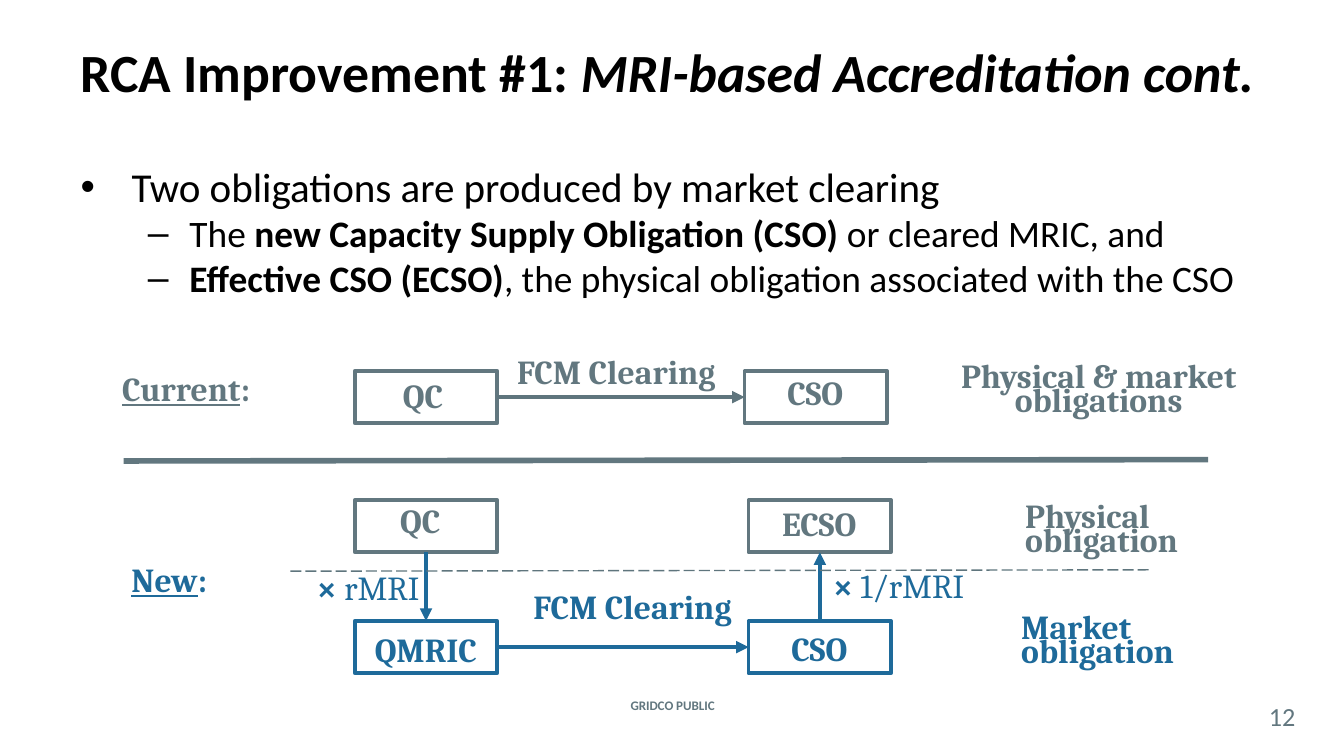
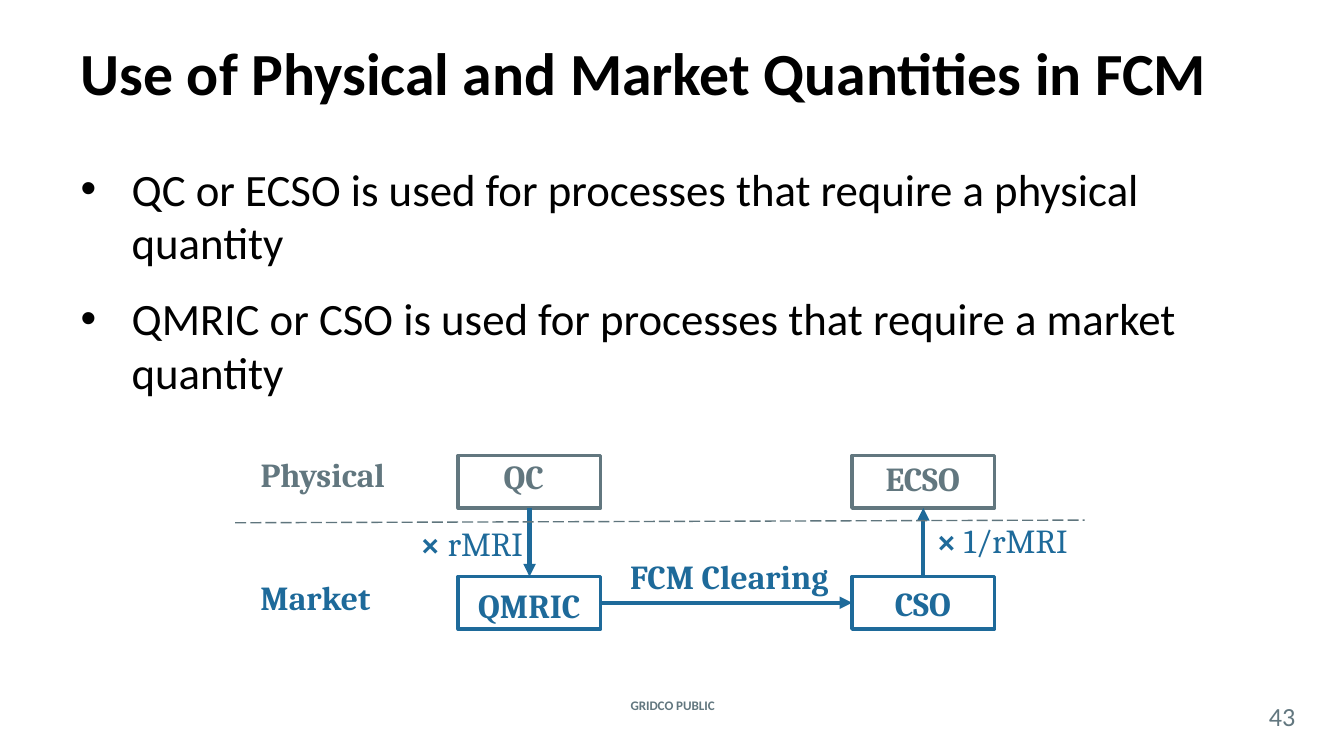
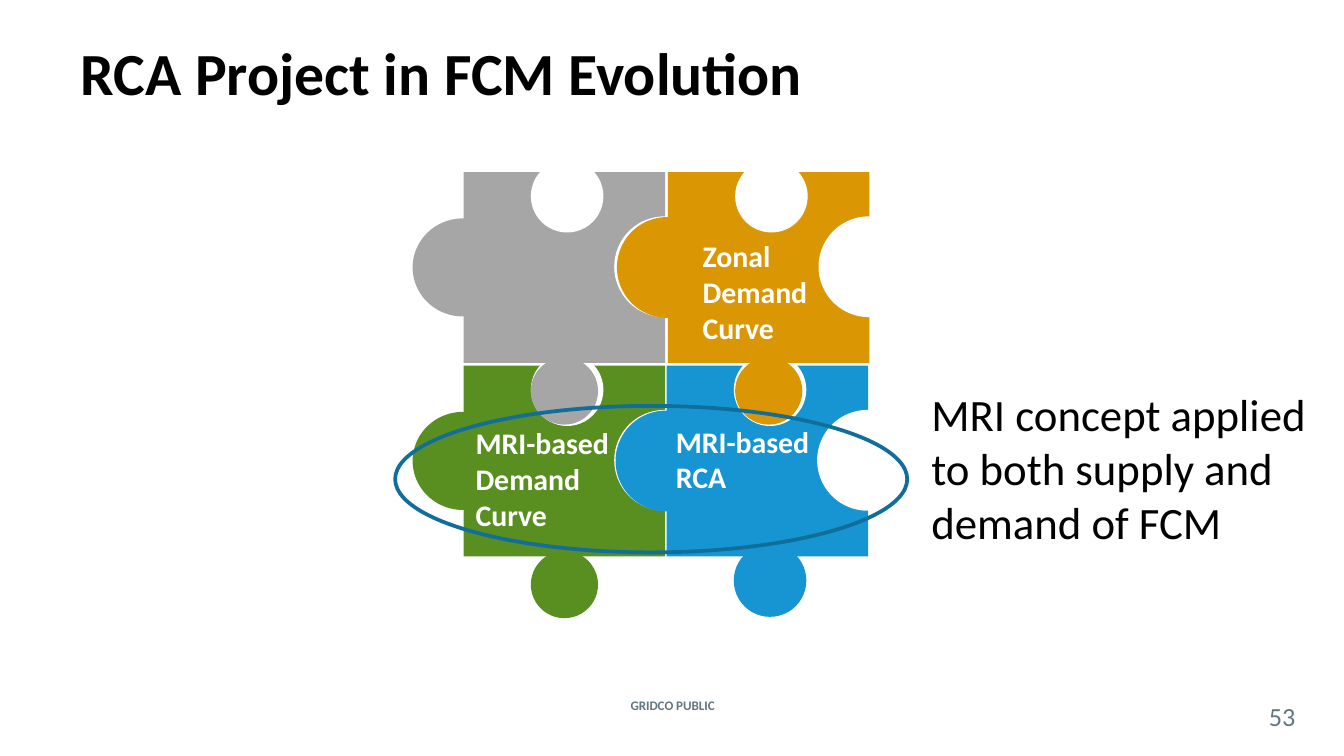
import pptx
import pptx.util
import pptx.dml.color
import pptx.enum.dml
import pptx.enum.shapes
import pptx.enum.text
import pptx.oxml.ns
import lxml.etree

Inches = pptx.util.Inches
Shape = pptx.enum.shapes.MSO_SHAPE
Align = pptx.enum.text.PP_ALIGN
Anchor = pptx.enum.text.MSO_ANCHOR
Dash = pptx.enum.dml.MSO_LINE
qn = pptx.oxml.ns.qn


class Theme:
    sans = "Calibri"
    serif = "Cambria"
    black = "000000"
    white = "FFFFFF"
    slate = "62777F"
    steel = "5F757D"
    blue = "1E6A9A"
    ring = "116E9B"
    green = "598E20"
    grey = "A6A6A6"
    sky = "1795D2"
    gold = "DB9604"
    title = 32
    label = 18
    piece = 16
    page = 14
    foot = 7
    lead = 13
    gap = 12
    edge = 2
    arrow = 2.25


BOX = (1.06, 0.39)
STEP = (2.93, 0.9)
TILE = (1.5, 1.42)


def color(code):
    return pptx.dml.color.RGBColor.from_string(code)


def place(shape, left, top, width, height):
    shape.left, shape.top = Inches(left), Inches(top)
    shape.width, shape.height = Inches(width), Inches(height)


def write(para, runs, size, tint=Theme.black, face=Theme.sans, bold=None):
    if isinstance(runs, str):
        runs = [(runs, "")]
    font = para.font
    font.name, font.size, font.bold = face, pptx.util.Pt(size), bold
    font.color.rgb = color(tint)
    for text, marks in runs:
        run = para.add_run()
        run.text = text
        if "b" in marks:
            run.font.bold = True
        if "i" in marks:
            run.font.italic = True
        if "u" in marks:
            run.font.underline = True


def add_text(slide, at, runs, size, tint, face=Theme.sans, bold=True,
             align=Align.LEFT, anchor=Anchor.TOP):
    box = slide.shapes.add_textbox(*map(Inches, at))
    frame = box.text_frame
    frame.word_wrap = True
    frame.vertical_anchor = anchor
    para = frame.paragraphs[0]
    para.alignment = align
    write(para, runs, size, tint, face, bold)
    return frame


def add_label(slide, at, runs, tint, bold=True, align=Align.LEFT):
    frame = add_text(slide, at, runs, Theme.label, tint, Theme.serif, bold, align)
    para = frame.paragraphs[0]
    para.line_spacing = pptx.util.Pt(Theme.lead)
    para.space_after = pptx.util.Pt(Theme.gap)


def add_form(slide, kind, at, fill=None, line=None):
    form = slide.shapes.add_shape(kind, *map(Inches, at))
    form.shadow.inherit = False
    if fill:
        form.fill.solid()
        form.fill.fore_color.rgb = color(fill)
    else:
        form.fill.background()
    if line:
        form.line.color.rgb = color(line)
        form.line.width = pptx.util.Pt(Theme.edge)
    else:
        form.line.fill.background()
    return form


def add_box(slide, left, top, tint):
    return add_form(slide, Shape.RECTANGLE, (left, top, *BOX), line=tint)


def add_line(slide, ends, tint, width, dash=None):
    straight = pptx.enum.shapes.MSO_CONNECTOR.STRAIGHT
    line = slide.shapes.add_connector(straight, *map(Inches, ends))
    line.line.color.rgb = color(tint)
    line.line.width = pptx.util.Pt(width)
    if dash:
        line.line.dash_style = dash
    lxml.etree.SubElement(line._element.spPr, qn("a:effectLst"))
    return line


def add_arrow(slide, start, side, end, goal, tint):
    line = add_line(slide, (0, 0, 0, 0), tint, Theme.arrow)
    line.begin_connect(start, side)
    line.end_connect(end, goal)
    tail = lxml.etree.SubElement(line.line._get_or_add_ln(), qn("a:tailEnd"))
    tail.set("type", "triangle")


def add_page(deck, title, number, size=Theme.title, width=9):
    slide = deck.slides.add_slide(deck.slide_layouts[1])
    head = slide.shapes.title
    place(head, 0.5, 0.06, width, 0.94)
    head.text_frame.vertical_anchor = Anchor.MIDDLE
    para = head.text_frame.paragraphs[0]
    para.alignment = Align.LEFT
    write(para, title, size, bold=True)
    add_text(slide, (4.27, 5.19, 1.47, 0.12), "GRIDCO PUBLIC", Theme.foot,
             Theme.slate, align=Align.CENTER, anchor=Anchor.MIDDLE)
    frame = add_text(slide, (9.33, 5.22, 0.42, 0.22), number, Theme.page,
                     Theme.slate, bold=False, align=Align.CENTER, anchor=Anchor.MIDDLE)
    frame.margin_left = frame.margin_right = frame.margin_top = frame.margin_bottom = 0
    return slide


def add_body(slide, at, items, bullet=True):
    body = slide.placeholders[1]
    place(body, *at)
    frame = body.text_frame
    frame.auto_size = pptx.enum.text.MSO_AUTO_SIZE.NONE
    for index, (level, size, runs) in enumerate(items):
        para = frame.add_paragraph() if index else frame.paragraphs[0]
        para.level = level
        left, hang = [(0.38, 0.38), (0.81, 0.31)][level] if bullet else (0, 0)
        props = para._p.get_or_add_pPr()
        props.set("marL", str(Inches(left)))
        props.set("indent", str(-Inches(hang)))
        if not bullet:
            lxml.etree.SubElement(props, qn("a:buNone"))
        para.space_before = pptx.util.Pt(Theme.gap if index and not level else 0)
        write(para, runs, size)


def add_flow(slide, left, top, clear):
    def label(across, down, width, runs, tint, bold=True):
        add_label(slide, (left + across, top + down, width, 0.39), runs, tint, bold)

    right, low = left + STEP[0], top + STEP[1]
    qc = add_box(slide, left, top, Theme.slate)
    ecso = add_box(slide, right, top, Theme.slate)
    qmric = add_box(slide, left, low, Theme.blue)
    cso = add_box(slide, right, low, Theme.blue)
    add_arrow(slide, qc, 2, qmric, 0, Theme.blue)
    add_arrow(slide, qmric, 3, cso, 1, Theme.blue)
    add_arrow(slide, cso, 0, ecso, 2, Theme.blue)
    label(0.24, 0.07, 0.6, "QC", Theme.slate)
    label(3.08, 0.09, 0.81, "ECSO", Theme.slate)
    label(0.05, 1.03, 1.09, "QMRIC", Theme.blue)
    label(3.15, 1.02, 1.08, "CSO", Theme.blue)
    label(*clear, 1.72, "FCM Clearing", Theme.blue)
    label(-0.38, 0.57, 1.09, [("× ", "b"), ("rMRI", "")], Theme.blue, None)
    label(3.46, 0.55, 1.2, [("× ", "b"), ("1/rMRI", "")], Theme.blue, None)


def add_piece(slide, left, top, tint, tab, knob, drop):
    def disc(across, down, width, height, fill):
        add_form(slide, Shape.OVAL, (left + across, top + down, width, height), fill)

    add_form(slide, Shape.RECTANGLE, (left, top, *TILE), tint)
    disc(1.12, 0.33, 0.75, 0.75, Theme.white)
    disc(-0.38, (TILE[1] - tab) / 2, 0.75, tab, tint)
    disc(0.5, drop, knob, knob, tint)
    disc(0.5, -0.09, 0.54, 0.54, Theme.white)


def accredit(deck):
    title = [("RCA Improvement #1: ", ""), ("MRI-based Accreditation cont.", "i")]
    slide = add_page(deck, title, "12", 28.8, 9.17)
    add_body(slide, (0.5, 1.15, 9, 1.42), [
        (0, 22, "Two obligations are produced by market clearing"),
        (1, 20, [("The ", ""), ("new Capacity Supply Obligation (CSO)", "b"),
                 (" or cleared MRIC, and", "")]),
        (1, 20, [("Effective CSO (ECSO)", "b"),
                 (", the physical obligation associated with the CSO", "")]),
    ])
    qc = add_box(slide, 2.64, 2.76, Theme.slate)
    cso = add_box(slide, 5.54, 2.76, Theme.slate)
    add_arrow(slide, qc, 3, cso, 1, Theme.steel)
    add_label(slide, (2.9, 2.86, 0.74, 0.46), "QC", Theme.slate)
    add_label(slide, (5.76, 2.84, 0.86, 0.4), "CSO", Theme.slate)
    add_label(slide, (3.75, 2.68, 1.81, 0.62), "FCM Clearing", Theme.slate)
    add_label(slide, (7.02, 2.71, 2.31, 0.47), "Physical & market obligations",
              Theme.slate, align=Align.CENTER)
    add_label(slide, (0.81, 2.81, 1.47, 0.43), [("Current", "u"), (":", "")], Theme.slate)
    add_line(slide, (0.92, 3.43, 8.99, 3.42), Theme.slate, 3)
    add_flow(slide, 2.64, 3.72, (1.23, 0.71))
    add_label(slide, (7.53, 3.75, 1.72, 0.39), "Physical obligation", Theme.slate)
    add_label(slide, (7.5, 4.58, 1.51, 0.39), "Market obligation", Theme.blue)
    add_label(slide, (0.88, 4.23, 1.22, 0.39), [("New", "u"), (":", "")], Theme.blue)
    add_line(slide, (2.16, 4.25, 8.56, 4.24), Theme.steel, 0.75, Dash.LONG_DASH)


def amounts(deck):
    slide = add_page(deck, "Use of Physical and Market Quantities in FCM", "43")
    add_body(slide, (0.5, 1.15, 9.25, 3.91), [
        (0, 24, "QC or ECSO is used for processes that require a physical quantity"),
        (0, 24, "QMRIC or CSO is used for processes that require a market quantity"),
    ])
    add_flow(slide, 3.41, 3.39, (1.18, 0.82))
    add_label(slide, (1.84, 3.45, 1.32, 0.39), "Physical", Theme.slate)
    add_label(slide, (1.84, 4.36, 1.33, 0.39), "Market", Theme.blue)
    add_line(slide, (1.75, 3.89, 8.07, 3.87), Theme.steel, 0.75, Dash.LONG_DASH)


def puzzle(deck):
    slide = add_page(deck, "RCA Project in FCM Evolution", "53")
    add_body(slide, (6.83, 2.83, 3.01, 1.48),
             [(0, 24, "MRI concept applied to both supply and demand of FCM")], False)
    add_piece(slide, 3.45, 2.72, Theme.green, 0.73, 0.5, 1.38)
    add_piece(slide, 3.45, 1.28, Theme.grey, 0.73, 0.5, 1.38)
    add_piece(slide, 4.96, 2.72, Theme.sky, 0.75, 0.54, 1.33)
    add_piece(slide, 4.97, 1.28, Theme.gold, 0.75, 0.5, 1.38)
    for at, text in [
        ((3.44, 3.11, 1.5, 0.91), "MRI-based Demand Curve"),
        ((4.93, 3.1, 1.25, 0.64), "MRI-based RCA"),
        ((5.13, 1.72, 1.16, 0.91), "Zonal Demand Curve"),
    ]:
        add_text(slide, at, text, Theme.piece, Theme.white)
    add_form(slide, Shape.OVAL, (2.94, 3.02, 3.81, 1.09), line=Theme.ring)


def main():
    deck = pptx.Presentation()
    deck.slide_width = Inches(10)
    deck.slide_height = deck.slide_width * 9 // 16
    accredit(deck)
    amounts(deck)
    puzzle(deck)
    deck.save("out.pptx")


if __name__ == "__main__":
    main()
